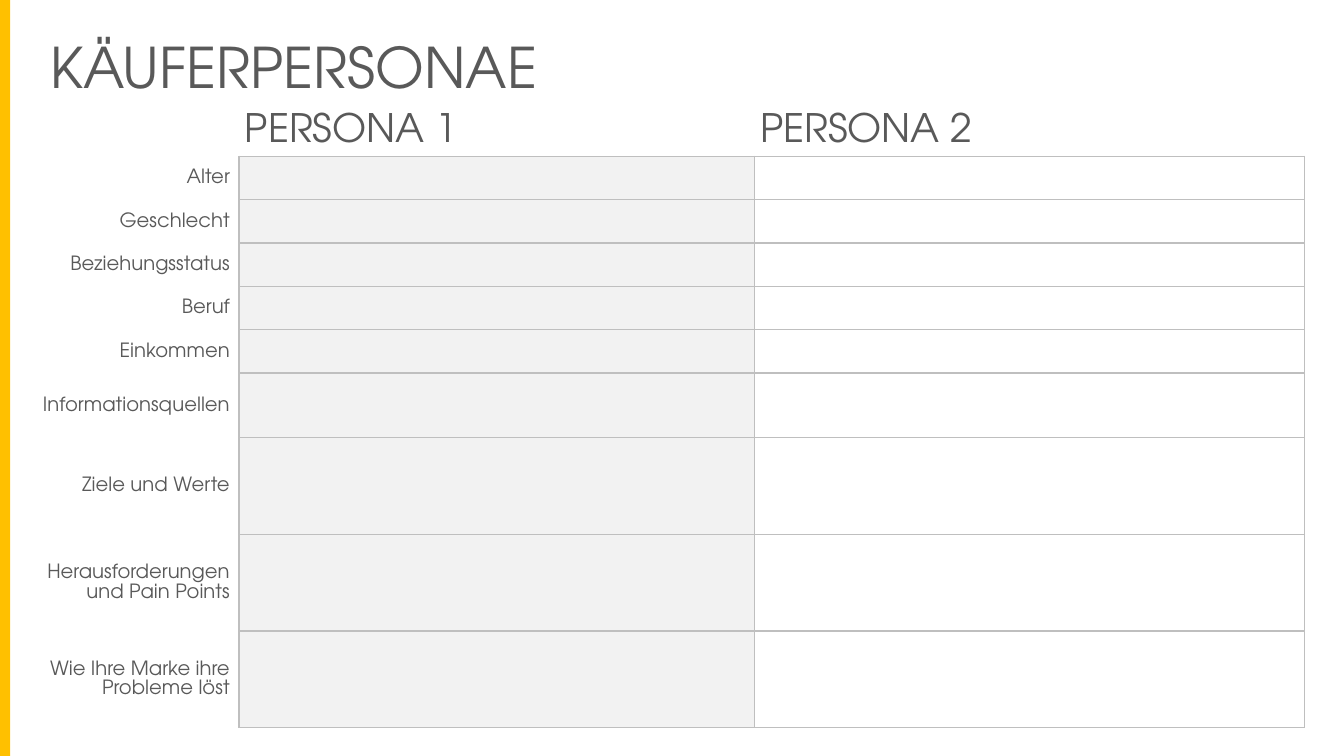
from dataclasses import dataclass

import pptx
import pptx.dml.color
import pptx.enum.shapes
import pptx.enum.text
import pptx.oxml
import pptx.oxml.ns
import pptx.util
from pptx.util import Inches

FONT = "TeX Gyre Adventor"
TEXT, GRID, SHADE, WHITE, ACCENT = "595959", "BFBFBF", "F2F2F2", "FFFFFF", "FFC000"


@dataclass(frozen=True)
class Trait:
    label: str
    height: float = 0.43


@dataclass(frozen=True)
class Borders:
    left: str = GRID
    right: str = GRID
    top: str = GRID
    bottom: str = GRID
    bottom_width: float = 1


PERSONAS = ["PERSONA 1", "PERSONA 2"]
TRAITS = [
    Trait("Alter"),
    Trait("Geschlecht"),
    Trait("Beziehungsstatus"),
    Trait("Beruf"),
    Trait("Einkommen"),
    Trait("Informationsquellen", 0.64),
    Trait("Ziele und Werte", 0.96),
    Trait("Herausforderungen und Pain Points", 0.96),
    Trait("Wie Ihre Marke ihre Probleme löst", 0.96),
]
COLUMN_WIDTHS = [2.13, 5.11, 5.46]
HEADER_HEIGHT = 0.43

CORNER_BORDERS = Borders(WHITE, WHITE, WHITE, WHITE, 3)
HEADER_BORDERS = Borders(left=WHITE, right=WHITE, top=WHITE)
LABEL_BORDERS = Borders(left=WHITE, top=WHITE, bottom=WHITE)


def color(value: str) -> pptx.dml.color.RGBColor:
    return pptx.dml.color.RGBColor.from_string(value)


def format_runs(paragraph, size: float) -> None:
    for run in paragraph.runs:
        run.font.name = FONT
        run.font.size = pptx.util.Pt(size)
        run.font.color.rgb = color(TEXT)


def set_borders(cell, borders: Borders) -> None:
    sides = [("lnL", borders.left, 1), ("lnR", borders.right, 1),
             ("lnT", borders.top, 1), ("lnB", borders.bottom, borders.bottom_width)]
    properties = cell._tc.get_or_add_tcPr()
    for position, (tag, line_color, width) in enumerate(sides):
        properties.insert(position, pptx.oxml.parse_xml(
            f'<a:{tag} {pptx.oxml.ns.nsdecls("a")} w="{pptx.util.Pt(width)}">'
            f'<a:solidFill><a:srgbClr val="{line_color}"/></a:solidFill></a:{tag}>'))


def set_cell_text(cell, text: str, size: float, left: float, right: float,
                  alignment: pptx.enum.text.PP_ALIGN) -> None:
    cell.margin_left, cell.margin_right = Inches(left), Inches(right)
    cell.margin_top = cell.margin_bottom = 0
    cell.vertical_anchor = pptx.enum.text.MSO_ANCHOR.MIDDLE
    cell.text_frame.text = text
    paragraph = cell.text_frame.paragraphs[0]
    paragraph.alignment = alignment
    paragraph.line_spacing = 1.07
    format_runs(paragraph, size)


def add_title(slide) -> None:
    shape = slide.shapes.add_textbox(Inches(0.4), Inches(0.27), Inches(5.1), Inches(0.77))
    text_frame = shape.text_frame
    text_frame.word_wrap = False
    text_frame.auto_size = pptx.enum.text.MSO_AUTO_SIZE.SHAPE_TO_FIT_TEXT
    text_frame.text = "KÄUFERPERSONAE"
    format_runs(text_frame.paragraphs[0], 40)


def add_accent_bar(slide, height: int) -> None:
    shape = slide.shapes.add_shape(
        pptx.enum.shapes.MSO_SHAPE.RECTANGLE, 0, 0, Inches(0.1), height)
    shape.shadow.inherit = False
    shape.fill.solid()
    shape.fill.fore_color.rgb = color(ACCENT)
    shape.line.fill.background()


def add_persona_table(slide) -> None:
    heights = [HEADER_HEIGHT] + [trait.height for trait in TRAITS]
    table = slide.shapes.add_table(
        len(heights), len(COLUMN_WIDTHS), Inches(0.24), Inches(1.05),
        Inches(sum(COLUMN_WIDTHS)), Inches(sum(heights))).table
    table.first_row = table.horz_banding = False
    for column, width in zip(table.columns, COLUMN_WIDTHS):
        column.width = Inches(width)
    for row, height in zip(table.rows, heights):
        row.height = Inches(height)
    for cell in table.iter_cells():
        cell.fill.background()

    # Persona headings
    set_borders(table.cell(0, 0), CORNER_BORDERS)
    for column_index, persona in enumerate(PERSONAS, start=1):
        cell = table.cell(0, column_index)
        set_cell_text(cell, persona, 28, 0.06, 0.06, pptx.enum.text.PP_ALIGN.LEFT)
        set_borders(cell, HEADER_BORDERS)

    # Trait labels and the fields to fill in
    for row_index, trait in enumerate(TRAITS, start=1):
        label, first, second = table.rows[row_index].cells
        set_cell_text(label, trait.label, 14, 0.07, 0.09, pptx.enum.text.PP_ALIGN.RIGHT)
        set_borders(label, LABEL_BORDERS)
        first.fill.solid()
        first.fill.fore_color.rgb = color(SHADE)
        for cell in (first, second):
            set_borders(cell, Borders())


def main() -> None:
    presentation = pptx.Presentation()
    presentation.slide_width = Inches(13.33)
    presentation.slide_height = Inches(7.5)
    slide = presentation.slides.add_slide(presentation.slide_layouts[6])
    add_title(slide)
    add_accent_bar(slide, presentation.slide_height)
    add_persona_table(slide)
    presentation.save("out.pptx")


if __name__ == "__main__":
    main()
